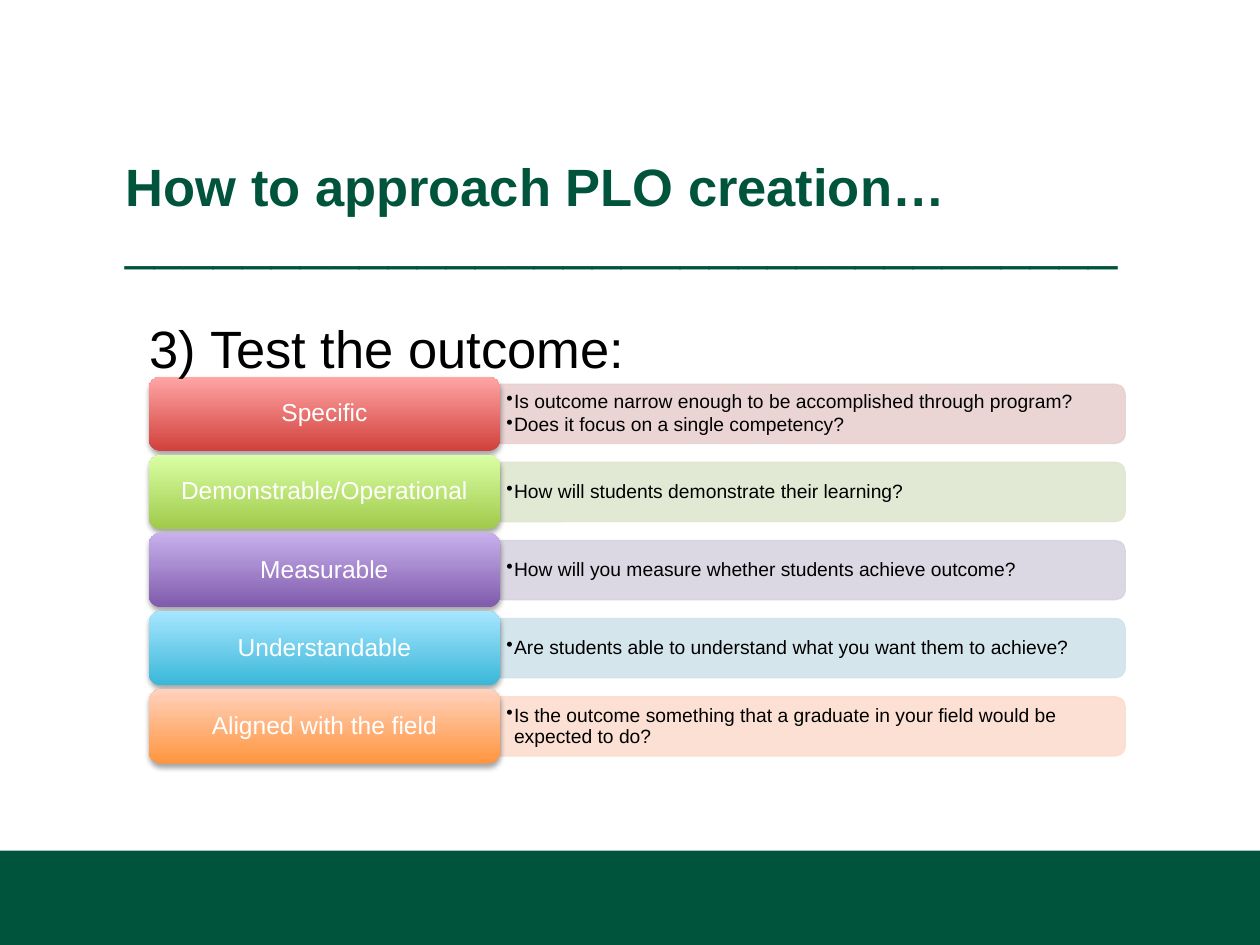
from lxml import etree
from pptx import Presentation, util as u
from pptx.dml.color import RGBColor
from pptx.enum import shapes, text
from pptx.oxml import ns

COLORS = {"green": "00543C", "black": "000000", "white": "FFFFFF"}

# label, dark and light gradient ends, bar colour, questions
ROWS = [
    ("Specific", "D1403C", "FFA6A5", "E8D0D0",
     ["Is outcome narrow enough to be accomplished through program?",
      "Does it focus on a single competency?"]),
    ("Demonstrable/Operational", "A0CA4A", "DAFFA5", "DEE7D1",
     ["How will students demonstrate their learning?"]),
    ("Measurable", "7F5BAB", "C8B0ED", "D8D3E0",
     ["How will you measure whether students achieve outcome?"]),
    ("Understandable", "39B7D8", "A7E6FF", "D0E3EA",
     ["Are students able to understand what you want them to achieve?"]),
    ("Aligned with the field", "FF953E", "FFD2BD", "FCDDCF",
     ["Is the outcome something that a graduate in your field would be expected to do?"]),
]


def style(font, size, color, bold=False):
    font.name, font.size, font.bold = "Arial", u.Pt(size), bold
    font.color.rgb = RGBColor.from_string(COLORS[color])


def add(parent, tag, **attrs):
    return etree.SubElement(parent, ns.qn(tag), attrs)


prs = Presentation()
prs.slide_width, prs.slide_height = u.Inches(10), u.Inches(7.5)
s = prs.slides.add_slide(prs.slide_layouts[6])

# Footer band
sp = s.shapes.add_shape(shapes.MSO_SHAPE.RECTANGLE, 0, u.Inches(6.75), u.Inches(10), u.Inches(0.75))
sp.shadow.inherit = False
sp.fill.solid()
sp.fill.fore_color.rgb = RGBColor.from_string(COLORS["green"])
sp.line.fill.background()

# Title and its rule of underscores
tf = s.shapes.add_textbox(u.Inches(0.9), u.Inches(1.26), u.Inches(8.25), u.Inches(1.19)).text_frame
tf.word_wrap = True
p = tf.paragraphs[0]
p.text = "How to approach PLO creation…\v" + "_" * 34
p.line_spacing = u.Pt(30)
for r, bold in zip(p.runs, (True, False)):
    style(r.font, 30, "green", bold)

# Criteria rows
TOP, PITCH = 2.99, 0.62
LABEL_X, LABEL_W, LABEL_H = 1.18, 2.79, 0.59
BAR_X, BAR_W, BAR_H = LABEL_X + LABEL_W, 4.96, 0.47
for i, (label, dark, light, tint, questions) in enumerate(ROWS):
    top = TOP + i * PITCH
    mid = top + LABEL_H / 2

    # Bar, turned so that its rounded corners face right
    sp = s.shapes.add_shape(
        shapes.MSO_SHAPE.ROUND_2_SAME_RECTANGLE,
        u.Inches(BAR_X + (BAR_W - BAR_H) / 2), u.Inches(mid - BAR_W / 2),
        u.Inches(BAR_H), u.Inches(BAR_W))
    sp.rotation = 90
    sp.shadow.inherit = False
    sp.fill.solid()
    sp.fill.fore_color.rgb = sp.line.color.rgb = RGBColor.from_string(tint)
    sp.line.width = u.Pt(0.75)
    for clr in sp._element.spPr.iter(ns.qn("a:srgbClr")):
        add(clr, "a:alpha", val="90000")

    # Questions
    tf = s.shapes.add_textbox(u.Inches(BAR_X), u.Inches(mid - 0.215),
                              u.Inches(4.93), u.Inches(0.43)).text_frame
    tf.word_wrap = True
    tf.vertical_anchor = text.MSO_ANCHOR.MIDDLE
    tf.margin_left = tf.margin_right = u.Inches(0.05)
    tf.margin_top = tf.margin_bottom = u.Inches(0.02)
    tf.text = "\n".join(questions)
    for p in tf.paragraphs:
        p.line_spacing = 0.9
        p.space_after = u.Pt(1.65)
        pPr = p._p.get_or_add_pPr()
        pPr.set("marL", str(u.Inches(0.06)))
        pPr.set("indent", str(-u.Inches(0.06)))
        add(pPr, "a:buChar", char="•")
        style(p.runs[0].font, 11, "black")

    # Label with gradient and soft shadow
    sp = s.shapes.add_shape(shapes.MSO_SHAPE.ROUNDED_RECTANGLE, u.Inches(LABEL_X),
                            u.Inches(top), u.Inches(LABEL_W), u.Inches(LABEL_H))
    sp.fill.gradient()
    sp.fill.gradient_angle = 90
    for stop, color, pos in zip(sp.fill.gradient_stops, (dark, light), (0, 1)):
        stop.color.rgb = RGBColor.from_string(color)
        stop.position = pos
    sp.line.fill.background()
    sp.shadow.inherit = False
    effects = sp._element.spPr.find(ns.qn("a:effectLst"))
    shadow = add(effects, "a:outerShdw", blurRad=str(u.Pt(3.1)), dist=str(u.Pt(1.8)),
                 dir="5400000", rotWithShape="0")
    add(add(shadow, "a:srgbClr", val=COLORS["black"]), "a:alpha", val="35000")
    tf = sp.text_frame
    tf.word_wrap = True
    tf.vertical_anchor = text.MSO_ANCHOR.MIDDLE
    tf.margin_left = tf.margin_right = u.Inches(0.06)
    tf.margin_top = tf.margin_bottom = u.Inches(0.03)
    p = tf.paragraphs[0]
    p.text = label
    p.alignment = text.PP_ALIGN.CENTER
    p.line_spacing = 0.9
    style(p.runs[0].font, 14, "white")

# Step heading
tf = s.shapes.add_textbox(u.Inches(1.09), u.Inches(2.46), u.Inches(4.12), u.Inches(0.61)).text_frame
tf.word_wrap = False
p = tf.paragraphs[0]
p.text = "3) Test the outcome:"
style(p.runs[0].font, 30, "black")

prs.save("out.pptx")
